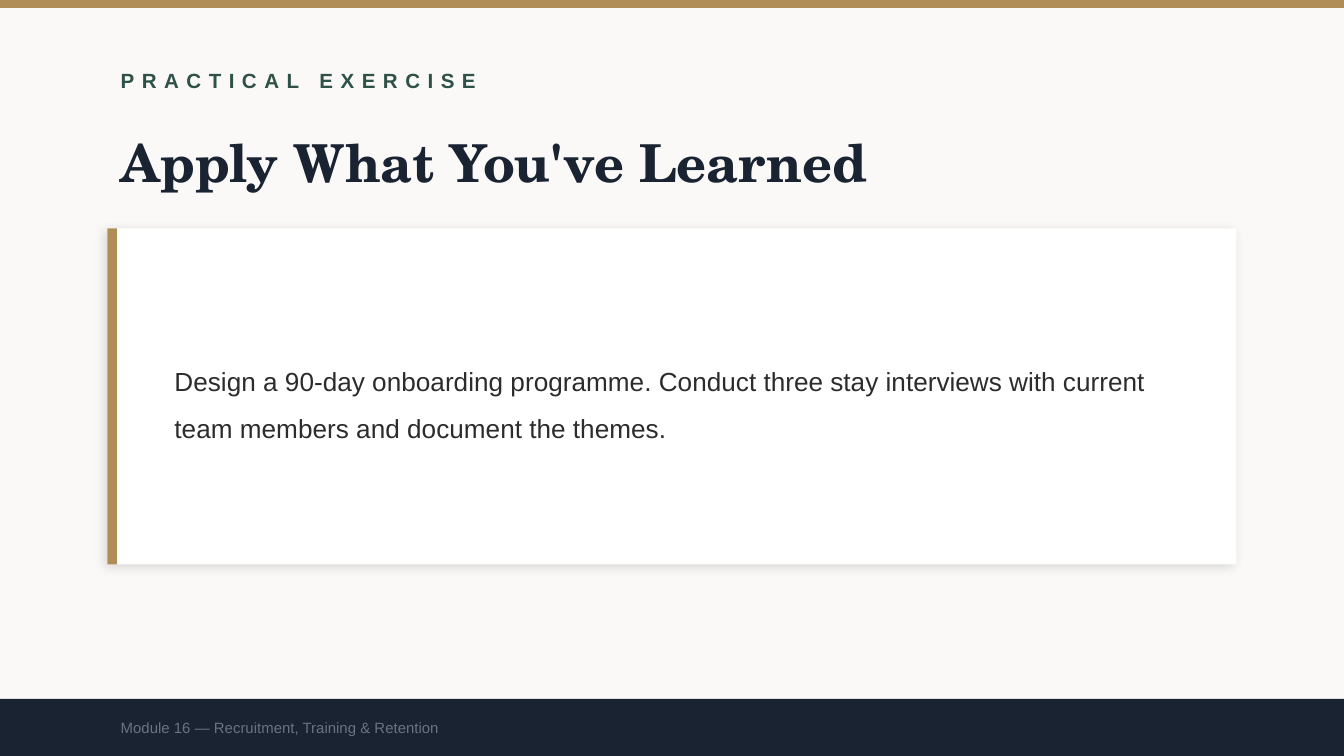
from lxml.etree import SubElement
from pptx import Presentation
from pptx.dml.color import RGBColor
from pptx.enum.shapes import MSO_SHAPE
from pptx.enum.text import MSO_ANCHOR
from pptx.oxml.ns import qn
from pptx.util import Pt

EMU_PER_PX = 4572  # 200 px to the inch
WIDTH, HEIGHT = 2000, 1125
LEFT, TEXT_WIDTH = 160, 1600
CARD_TOP, CARD_HEIGHT = 340, 500
FOOTER_TOP = 1040
FOOTER_HEIGHT = HEIGHT - FOOTER_TOP

COLORS = {
    "paper": "FAF9F7",
    "gold": "B08D57",
    "green": "2E5148",
    "navy": "1A2332",
    "white": "FFFFFF",
    "body": "2C2C2C",
    "muted": "6B7280",
    "shadow": "000000",
}


def color(name):
    return RGBColor.from_string(COLORS[name])


def px(*lengths):
    return [length * EMU_PER_PX for length in lengths]


class SlideBuilder:
    def __init__(self, slide, font="Arial"):
        self.slide = slide
        self.font = font
        fill = slide.background.fill
        fill.solid()
        fill.fore_color.rgb = color("paper")

    def rectangle(self, left, top, width, height, fill):
        shape = self.slide.shapes.add_shape(
            MSO_SHAPE.RECTANGLE, *px(left, top, width, height))
        shape.shadow.inherit = False
        shape.fill.solid()
        shape.fill.fore_color.rgb = color(fill)
        shape.line.fill.background()
        return shape

    def card(self, left, top, width, height):
        """Add a white panel with a soft shadow."""
        shape = self.rectangle(left, top, width, height, "white")
        effects = shape._element.spPr.find(qn("a:effectLst"))
        shadow = SubElement(
            effects, qn("a:outerShdw"), blurRad=str(Pt(6)), dist=str(Pt(2)),
            dir=str(135 * 60000), algn="bl", rotWithShape="0")
        tint = SubElement(shadow, qn("a:srgbClr"), val=COLORS["shadow"])
        SubElement(tint, qn("a:alpha"), val="12000")

    def text(self, left, top, width, height, words, size, ink,
             font=None, bold=False, spacing=None, line_spacing=None):
        box = self.slide.shapes.add_textbox(*px(left, top, width, height))
        frame = box.text_frame
        frame.word_wrap = True
        frame.vertical_anchor = MSO_ANCHOR.MIDDLE
        frame.text = words
        para = frame.paragraphs[0]
        para.line_spacing = line_spacing
        span = para.runs[0]
        span.font.name = font or self.font
        span.font.size = Pt(size)
        span.font.bold = bold
        span.font.color.rgb = color(ink)
        if spacing:
            span._r.get_or_add_rPr().set("spc", str(spacing * 100))


def main():
    deck = Presentation()
    deck.slide_width, deck.slide_height = px(WIDTH, HEIGHT)
    page = SlideBuilder(deck.slides.add_slide(deck.slide_layouts[6]))

    page.rectangle(0, 0, WIDTH, 12, "gold")
    page.text(LEFT, 80, TEXT_WIDTH, 80, "PRACTICAL EXERCISE", 11, "green",
              bold=True, spacing=4)
    page.text(LEFT, 180, TEXT_WIDTH, 120, "Apply What You've Learned", 28,
              "navy", font="TeX Gyre Schola", bold=True)

    page.card(LEFT, CARD_TOP, WIDTH - 2 * LEFT, CARD_HEIGHT)
    page.rectangle(LEFT, CARD_TOP, 14, CARD_HEIGHT, "gold")
    page.text(LEFT + 80, CARD_TOP + 40, 1540, CARD_HEIGHT - 80,
              "Design a 90-day onboarding programme. Conduct three stay "
              "interviews with current team members and document the themes.",
              14, "body", line_spacing=1.5)

    page.rectangle(0, FOOTER_TOP, WIDTH, FOOTER_HEIGHT, "navy")
    page.text(LEFT, FOOTER_TOP, TEXT_WIDTH, FOOTER_HEIGHT,
              "Module 16 — Recruitment, Training & Retention", 8, "muted")

    deck.save("out.pptx")


if __name__ == "__main__":
    main()
